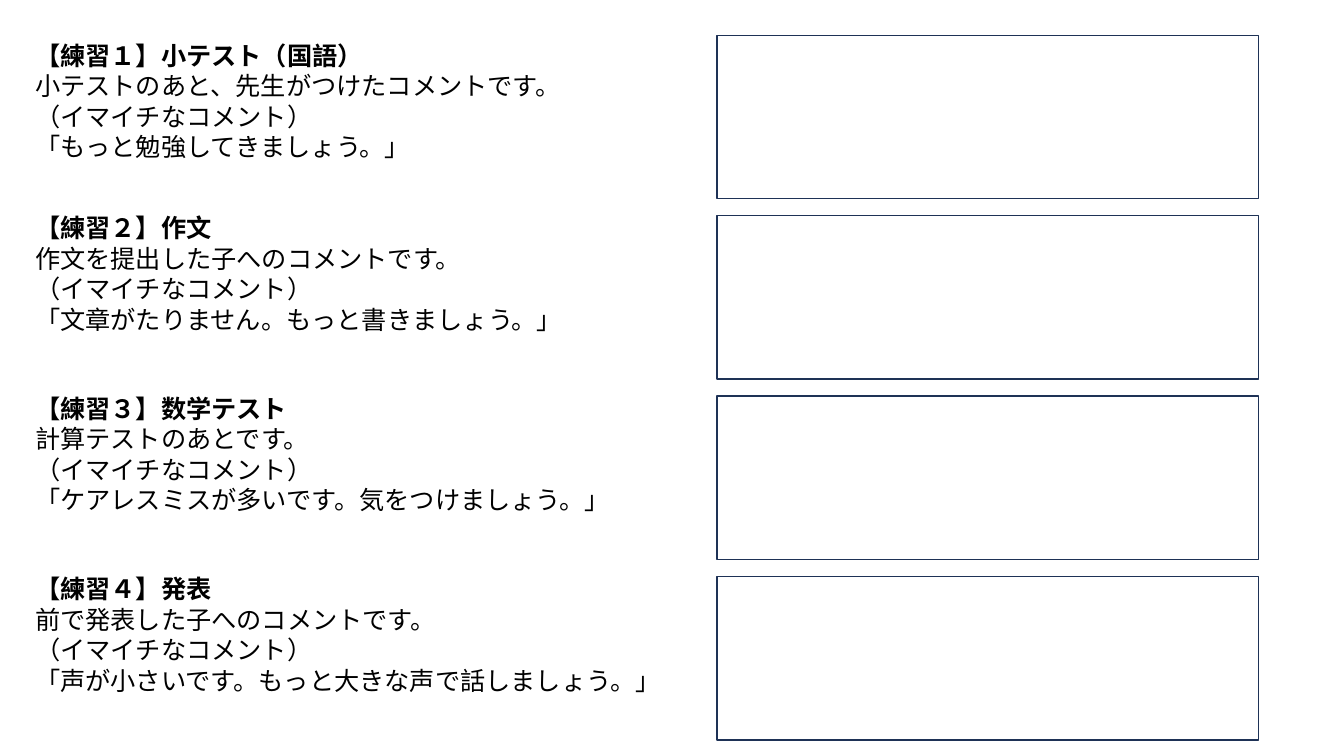
from dataclasses import dataclass
from lxml.etree import SubElement
from pptx import Presentation
from pptx.dml.color import RGBColor
from pptx.enum.shapes import MSO_SHAPE
from pptx.enum.text import MSO_AUTO_SIZE
from pptx.oxml.ns import qn
from pptx.util import Inches, Pt


@dataclass(frozen=True)
class Theme:
    face: str = "Noto Sans CJK JP"
    size: float = 18
    pitch: float = 21.7
    ink: str = "000000"
    paper: str = "FFFFFF"
    edge: str = "1E3256"


class Sheet:
    def __init__(self, slide, theme):
        self.slide = slide
        self.theme = theme

    def text(self, left, top, width, height, lines):
        box = self.slide.shapes.add_textbox(
            Inches(left), Inches(top), Inches(width), Inches(height))
        frame = box.text_frame
        frame.word_wrap = True
        frame.auto_size = MSO_AUTO_SIZE.SHAPE_TO_FIT_TEXT
        frame.text = "\n".join(lines)
        for i, para in enumerate(frame.paragraphs):
            para.line_spacing = Pt(self.theme.pitch)
            font = para.font
            font.size = Pt(self.theme.size)
            font.bold = i == 0
            font.color.rgb = RGBColor.from_string(self.theme.ink)
            font.name = self.theme.face
            SubElement(font._element, qn("a:ea"), typeface=self.theme.face)

    def frame(self, left, top, width, height):
        box = self.slide.shapes.add_shape(
            MSO_SHAPE.RECTANGLE,
            Inches(left), Inches(top), Inches(width), Inches(height))
        box.shadow.inherit = False
        box.fill.solid()
        box.fill.fore_color.rgb = RGBColor.from_string(self.theme.paper)
        box.line.color.rgb = RGBColor.from_string(self.theme.edge)
        box.line.width = Pt(1)


TASKS = [
    ("【練習１】小テスト（国語）", "小テストのあと、先生がつけたコメントです。",
     "「もっと勉強してきましょう。」"),
    ("【練習２】作文", "作文を提出した子へのコメントです。",
     "「文章がたりません。もっと書きましょう。」"),
    ("【練習３】数学テスト", "計算テストのあとです。",
     "「ケアレスミスが多いです。気をつけましょう。」"),
    ("【練習４】発表", "前で発表した子へのコメントです。",
     "「声が小さいです。もっと大きな声で話しましょう。」"),
]
LABEL = "（イマイチなコメント）"
TOP, STEP, LIFT = 0.35, 1.79, 0.08


def main():
    deck = Presentation()
    deck.slide_width, deck.slide_height = Inches(13.33), Inches(7.5)
    sheet = Sheet(deck.slides.add_slide(deck.slide_layouts[6]), Theme())
    for i, (title, scene, quote) in enumerate(TASKS):
        top = TOP + i * STEP
        lift = LIFT if i else 0
        sheet.text(0.25, top - lift, 6.67, 1.31, (title, scene, LABEL, quote))
        sheet.frame(7.11, top, 5.37, 1.62)
    deck.save("out.pptx")


if __name__ == "__main__":
    main()
